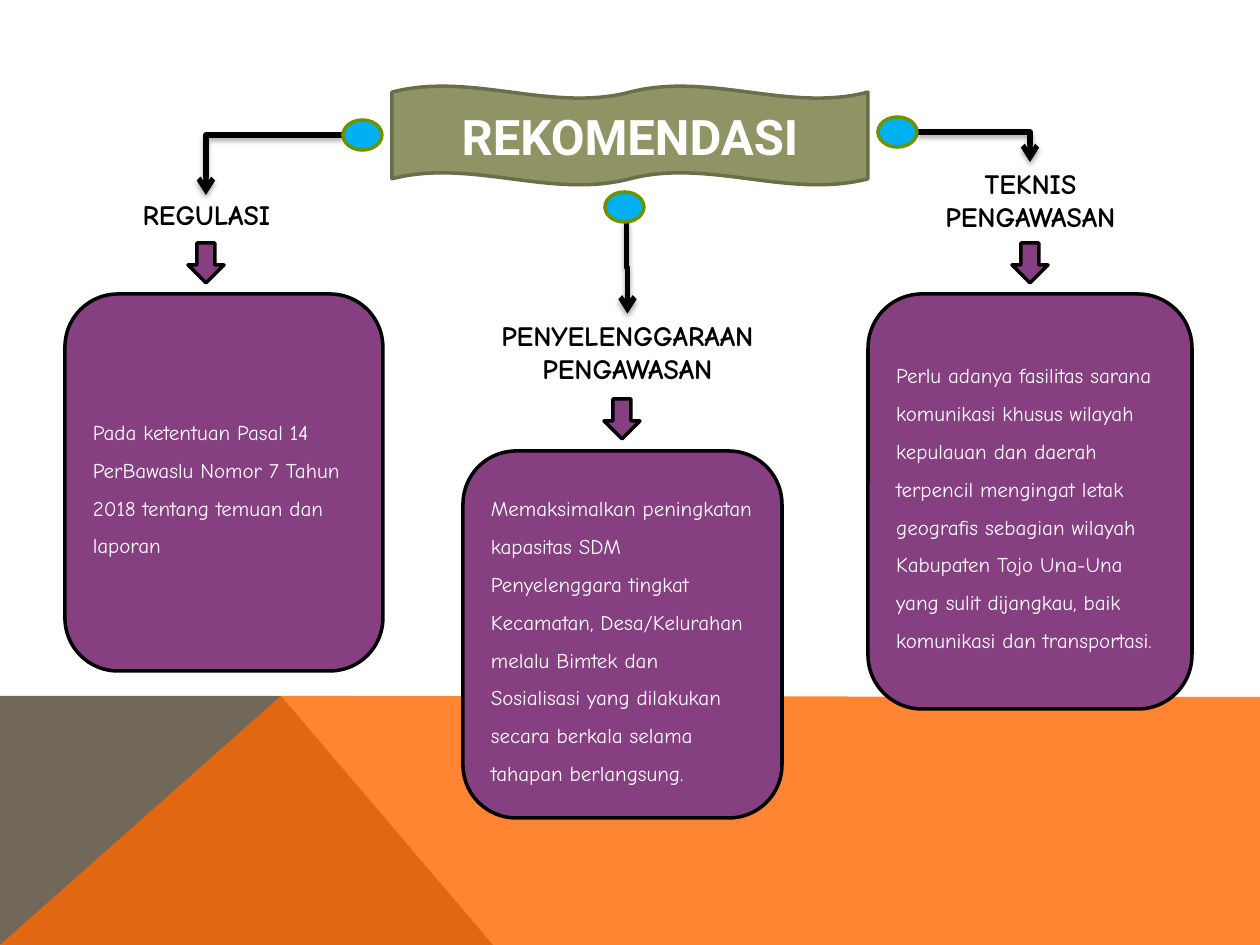
"""Builds the REKOMENDASI slide: a banner leading to three topic cards."""
from lxml import etree
from pptx import Presentation
from pptx import util as u
from pptx.dml.color import RGBColor
from pptx.enum import shapes, text
from pptx.oxml import parse_xml
from pptx.oxml.ns import nsdecls, qn

PX = 914400 / 126
kind = shapes.MSO_SHAPE
rgb = RGBColor.from_string
left, mid = text.PP_ALIGN.LEFT, text.PP_ALIGN.CENTER

deck = Presentation()
deck.slide_width, deck.slide_height = u.Inches(10), u.Inches(7.5)
page = deck.slides.add_slide(deck.slide_layouts[6])


def draw(form, box, fill, line):
    shape = page.shapes.add_shape(form, *[round(n * PX) for n in box])
    shape.shadow.inherit = False
    shape.fill.solid()
    shape.fill.fore_color.rgb = rgb(fill)
    shape.line.color.rgb = rgb(line)
    shape.line.width = u.Pt(2)
    return shape


def write(shape, words, size, font, color, bold, align, space=None):
    frame = shape.text_frame
    frame.word_wrap = True
    frame.vertical_anchor = text.MSO_ANCHOR.MIDDLE
    para = frame.paragraphs[0]
    para.alignment = align
    para.line_spacing = space
    run = para.add_run()
    run.text = words
    run.font.size, run.font.name, run.font.bold = u.Pt(size), font, bold
    run.font.color.rgb = rgb(color)


floor = [
    ("71685A", 100, [(0, 945), (0, 696), (281, 696), (493, 945)]),
    ("FF6700", 80, [(0, 945), (281, 696), (1260, 697), (1260, 945)]),
]
for fill, alpha, points in floor:
    pen = page.shapes.build_freeform(*points[0], scale=PX)
    pen.add_line_segments(points[1:], close=True)
    shape = pen.convert_to_shape()
    shape.shadow.inherit = False
    shape.fill.solid()
    shape.fill.fore_color.rgb = rgb(fill)
    shape.line.fill.background()
    if alpha < 100:
        color = shape.fill._xPr.find(qn("a:solidFill"))[0]
        etree.SubElement(color, qn("a:alpha")).set("val", str(alpha * 1000))

banner = draw(kind.DOUBLE_WAVE, (392, 86, 476, 99), "909465", "6B6D4B")
write(banner, "REKOMENDASI", 28, "Roboto", "FFFFFF", True, mid)

cards = [
    ((65, 294, 318, 377), "Pada ketentuan Pasal 14 PerBawaslu Nomor 7 Tahun 2018 "
     "tentang temuan dan laporan"),
    ((463, 451, 319, 367), "Memaksimalkan peningkatan kapasitas SDM Penyelenggara "
     "tingkat Kecamatan, Desa/Kelurahan melalu Bimtek dan Sosialisasi yang "
     "dilakukan secara berkala selama tahapan berlangsung."),
    ((868, 294, 324, 415), "Perlu adanya fasilitas sarana komunikasi khusus wilayah "
     "kepulauan dan daerah terpencil mengingat letak geografis sebagian wilayah "
     "Kabupaten Tojo Una-Una yang sulit dijangkau, baik komunikasi dan transportasi."),
]
for box, words in cards:
    card = draw(kind.ROUNDED_RECTANGLE, box, "864081", "000000")
    write(card, words, 12, "Comic Neue", "FFFFFF", False, left, 1.5)

heads = [
    ((890, 162, 281, 76), "TEKNIS PENGAWASAN"),
    ((458, 314, 339, 76), "PENYELENGGARAAN PENGAWASAN"),
    ((100, 184, 213, 60), "REGULASI"),
]
for box, words in heads:
    head = page.shapes.add_textbox(*[round(n * PX) for n in box])
    write(head, words, 16, "Comic Neue", "000000", True, mid)

for x, y in [(188, 243), (604, 399), (1012, 243)]:
    draw(kind.DOWN_ARROW, (x, y, 36, 40), "864081", "000000")

links = [
    ((343, 135, 206, 195), "bentConnector2", 0),
    ((673, 267, 581, 268), "bentConnector3", 270),
    ((918, 132, 1030, 162), "bentConnector2", 0),
]
for ends, form, turn in links:
    link = page.shapes.add_connector(
        shapes.MSO_CONNECTOR.ELBOW, *[round(n * PX) for n in ends])
    link.line.color.rgb = rgb("000000")
    link.line.width = u.Pt(3)
    prop = link._element.spPr
    prop.find(qn("a:xfrm")).set("rot", str(turn * 60000))
    prop.find(qn("a:prstGeom")).set("prst", form)
    etree.SubElement(link.line._get_or_add_ln(), qn("a:tailEnd")).set("type", "arrow")
    prop.append(parse_xml(
        f'<a:effectLst {nsdecls("a")}><a:outerShdw blurRad="39370" dist="22860" '
        'dir="5400000" rotWithShape="0"><a:srgbClr val="000000">'
        '<a:alpha val="35000"/></a:srgbClr></a:outerShdw></a:effectLst>'))

for x, y in [(343, 120), (605, 192), (878, 117)]:
    draw(kind.FLOWCHART_CONNECTOR, (x, y, 39, 30), "00B0F0", "6D9200")

deck.save("out.pptx")
